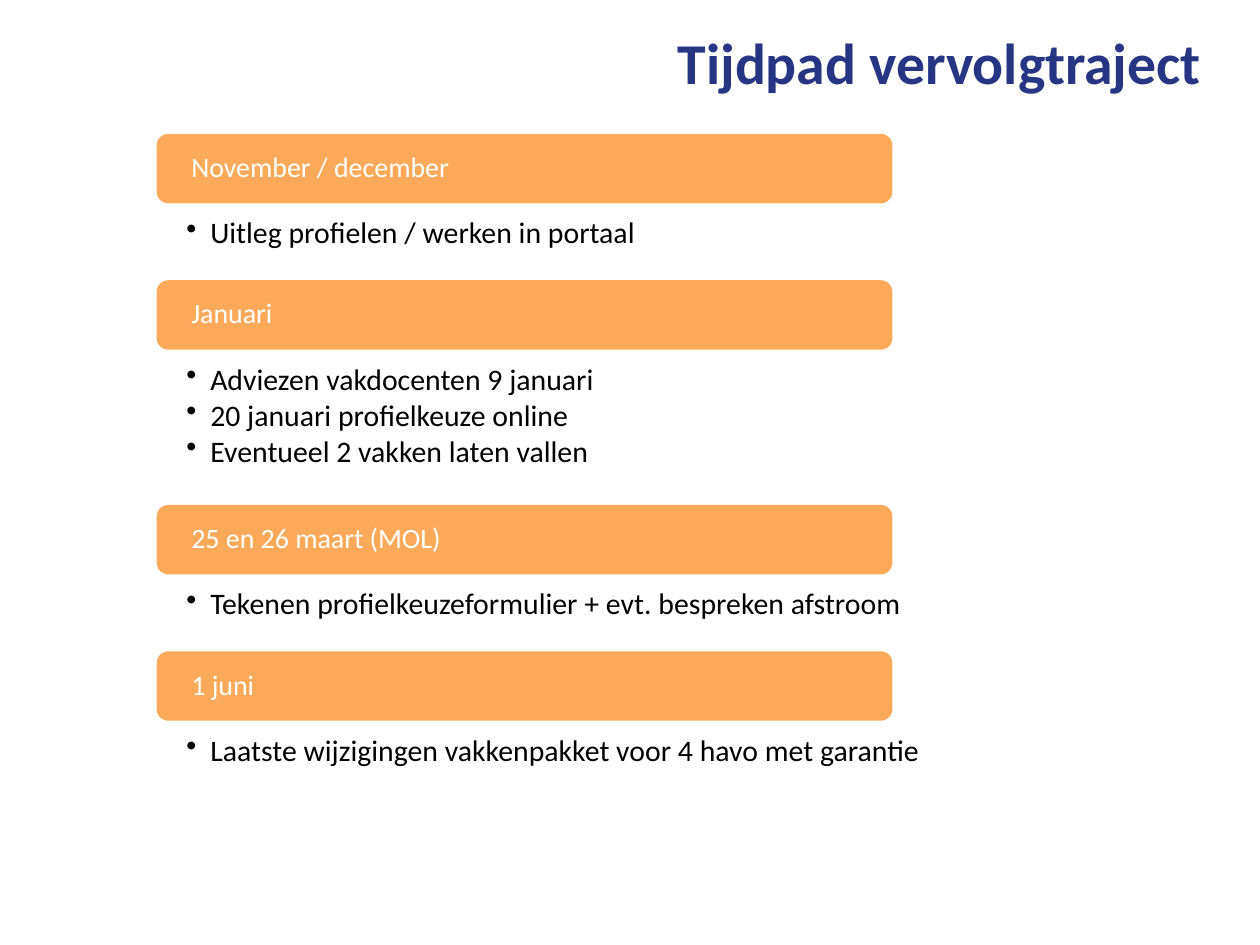
from dataclasses import dataclass

import lxml.etree
import pptx
import pptx.dml.color
import pptx.enum.shapes
import pptx.enum.text
import pptx.oxml.ns
import pptx.util

Cm = pptx.util.Cm
Pt = pptx.util.Pt
Anchor = pptx.enum.text.MSO_ANCHOR
ShapeType = pptx.enum.shapes.MSO_SHAPE

COLOURS = {"title": "283583", "heading": "FCAA59", "panel": "FFFFFF",
           "heading_text": "FFFFFF", "body_text": "000000"}
FONT = "Calibri"

# Vertical rhythm of the timeline, in centimetres
FIRST_PANEL_TOP = 3.4
PANEL_BASE_HEIGHT = 1.22
LINE_HEIGHT = 0.79
PANEL_GAP = 0.94
HEADING_OVERLAP = 0.7
HEADING_HEIGHT = 1.4


@dataclass
class Phase:
    heading: str
    actions: list[str]


PHASES = [
    Phase("November / december", ["Uitleg profielen / werken in portaal"]),
    Phase("Januari", ["Adviezen vakdocenten 9 januari",
                      "20 januari profielkeuze online",
                      "Eventueel 2 vakken laten vallen"]),
    Phase("25 en 26 maart (MOL)",
          ["Tekenen profielkeuzeformulier + evt. bespreken afstroom"]),
    Phase("1 juni",
          ["Laatste wijzigingen vakkenpakket voor 4 havo met garantie"]),
]


def colour(name: str) -> pptx.dml.color.RGBColor:
    return pptx.dml.color.RGBColor.from_string(COLOURS[name])


def add_bullet(paragraph) -> None:
    properties = paragraph._p.get_or_add_pPr()
    properties.set("marL", str(Cm(0.48)))
    properties.set("indent", str(-Cm(0.48)))
    bullet = lxml.etree.SubElement(properties, pptx.oxml.ns.qn("a:buChar"))
    bullet.set("char", "•")


def write_text(shape, lines: list[str], *, size: float, text_colour: str,
               anchor=Anchor.MIDDLE, margins=(0.25, 0.13, 0.25, 0.13),
               bold: bool = False, bullets: bool = False,
               space_after: float = 0) -> None:
    """Fill a shape; margins are left, top, right and bottom in centimetres."""
    frame = shape.text_frame
    frame.word_wrap = True
    frame.vertical_anchor = anchor
    (frame.margin_left, frame.margin_top,
     frame.margin_right, frame.margin_bottom) = map(Cm, margins)
    for index, line in enumerate(lines):
        paragraph = frame.add_paragraph() if index else frame.paragraphs[0]
        paragraph.text = line
        if bullets:
            add_bullet(paragraph)
        paragraph.alignment = pptx.enum.text.PP_ALIGN.LEFT
        paragraph.line_spacing = 0.9
        paragraph.space_after = Pt(space_after)
        paragraph.font.name = FONT
        paragraph.font.size = Pt(size)
        paragraph.font.bold = bold
        paragraph.font.color.rgb = colour(text_colour)


def add_block(slide, kind, left: float, top: float, width: float,
              height: float, fill: str):
    shape = slide.shapes.add_shape(kind, Cm(left), Cm(top), Cm(width), Cm(height))
    shape.shadow.inherit = False
    shape.fill.solid()
    shape.fill.fore_color.rgb = colour(fill)
    shape.line.fill.background()
    return shape


def draw_phase(slide, phase: Phase, top: float) -> float:
    """Draw one phase and return the top of the next one."""
    height = PANEL_BASE_HEIGHT + LINE_HEIGHT * len(phase.actions)
    panel = add_block(slide, ShapeType.RECTANGLE, 2.11, top, 21.2, height, "panel")
    write_text(panel, phase.actions, size=17, text_colour="body_text",
               anchor=Anchor.TOP, margins=(1.65, 1, 1.65, 0.33),
               bullets=True, space_after=2.2)
    heading = add_block(slide, ShapeType.ROUNDED_RECTANGLE, 3.16,
                        top - HEADING_OVERLAP, 14.83, HEADING_HEIGHT, "heading")
    write_text(heading, [phase.heading], size=16, text_colour="heading_text",
               margins=(0.63, 0, 0.63, 0))
    return top + height + PANEL_GAP


def main() -> None:
    presentation = pptx.Presentation()
    presentation.slide_width = Cm(25.4)
    presentation.slide_height = Cm(19.05)
    slide = presentation.slides.add_slide(presentation.slide_layouts[6])

    # Title
    title = slide.shapes.add_textbox(Cm(13.41), Cm(0.2), Cm(11.7), Cm(2.27))
    write_text(title, ["Tijdpad vervolgtraject"], size=33,
               text_colour="title", bold=True)

    # Timeline
    top = FIRST_PANEL_TOP
    for phase in PHASES:
        top = draw_phase(slide, phase, top)

    presentation.save("out.pptx")


if __name__ == "__main__":
    main()
